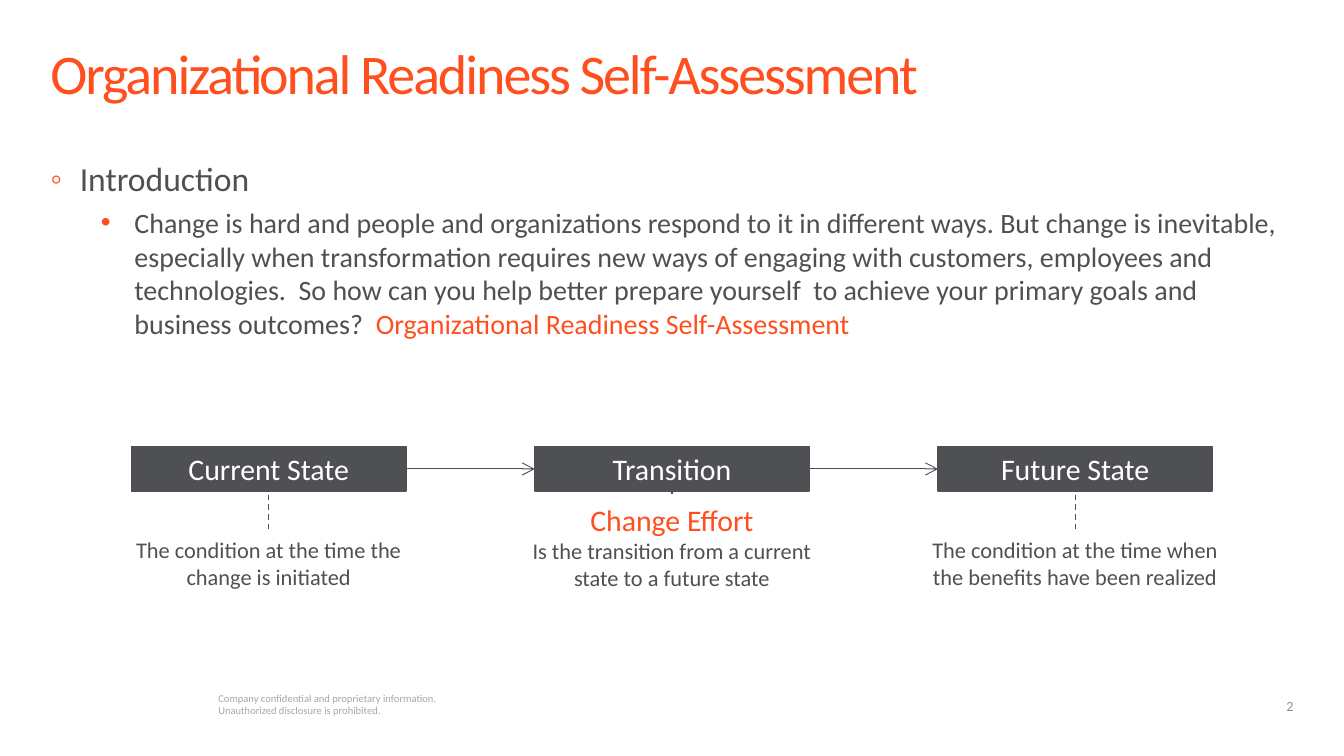
import pptx
import pptx.util
import pptx.dml.color
import pptx.enum.dml
import pptx.enum.shapes
import pptx.enum.text
import pptx.oxml.ns
from lxml import etree

PX = 9525
FONT = "Calibri"
COLORS = {
    "accent": "FF4F1F",
    "dark": "4E5054",
    "white": "FFFFFF",
    "footer": "A6A6A6",
    "number": "8C8C8C",
}
ALIGN = pptx.enum.text.PP_ALIGN
ANCHOR = pptx.enum.text.MSO_ANCHOR
DASH = pptx.enum.dml.MSO_LINE.DASH
QN = pptx.oxml.ns.qn

BOX_W, BOX_H, BOX_Y = 196, 32, 319
CAPTION_W = 226
FIRST_X, STEP = 192, 288
INTRO = (
    "Change is hard and people and organizations respond to it in different ways. "
    "But change is inevitable, especially when transformation requires new ways of "
    "engaging with customers, employees and technologies.  So how can you help better "
    "prepare yourself  to achieve your primary goals and business outcomes?  "
)
STATES = [
    ("Current State", 378, [("The condition at the time the change is initiated", 12, "dark")]),
    ("Transition", 353, [
        ("Change Effort", 16, "accent"),
        ("Is the transition from a current state to a future state", 12, "dark"),
    ]),
    ("Future State", 378, [
        ("The condition at the time when the benefits have been realized", 12, "dark"),
    ]),
]


def px(n):
    """Turn whole px into EMU."""
    return pptx.util.Emu(n * PX)


def rgb(name):
    """Look up a named colour."""
    return pptx.dml.color.RGBColor.from_string(COLORS[name])


def apply(obj, values):
    """Set each attribute of obj from a dict."""
    for name, value in values.items():
        setattr(obj, name, value)


def place(sp, x, y, w, h):
    """Move and size a shape."""
    apply(sp, {"left": px(x), "top": px(y), "width": px(w), "height": px(h)})


def frame(sp, insets=(0, 0, 0, 0), anchor=ANCHOR.TOP):
    """Format a text frame with px insets and return it."""
    tf = sp.text_frame
    apply(tf, {"word_wrap": True, "auto_size": pptx.enum.text.MSO_AUTO_SIZE.NONE,
               "vertical_anchor": anchor})
    sides = ("margin_left", "margin_top", "margin_right", "margin_bottom")
    apply(tf, {side: px(n) for side, n in zip(sides, insets)})
    return tf


def add_run(p, text, size, color):
    """Add a formatted run to a paragraph."""
    r = p.add_run()
    r.text = text
    apply(r.font, {"name": FONT, "size": pptx.util.Pt(size)})
    r.font.color.rgb = rgb(color)
    return r


def fill_text(tf, lines, align):
    """Write one paragraph for each (text, size, colour) line."""
    for i, line in enumerate(lines):
        p = tf.add_paragraph() if i else tf.paragraphs[0]
        p.alignment = align
        add_run(p, *line)


def add_text(s, box, lines, align=ALIGN.LEFT, insets=(0, 0, 0, 0), anchor=ANCHOR.TOP):
    """Add a wrapped text box."""
    sp = s.shapes.add_textbox(*map(px, box))
    fill_text(frame(sp, insets, anchor), lines, align)


def add_bullet(p, char, left, hang):
    """Give a paragraph an accent bullet and a hanging indent."""
    pPr = p._p.get_or_add_pPr()
    pPr.set("marL", str(px(left)))
    pPr.set("indent", str(px(-hang)))
    clr = etree.SubElement(pPr, QN("a:buClr"))
    etree.SubElement(clr, QN("a:srgbClr")).set("val", COLORS["accent"])
    etree.SubElement(pPr, QN("a:buChar")).set("char", char)


def add_title(s):
    """Fill the title placeholder."""
    sp = s.shapes.title
    place(sp, 36, 33, 888, 61)
    p = frame(sp).paragraphs[0]
    apply(p, {"alignment": ALIGN.LEFT, "line_spacing": 0.9})
    r = add_run(p, "Organizational Readiness Self-Assessment", 30, "accent")
    r._r.get_or_add_rPr().set("spc", "-110")


def add_body(s):
    """Fill the body placeholder with the introduction."""
    sp = s.placeholders[1]
    place(sp, 36, 94, 888, 374)
    tf = frame(sp, (0, 19, 0, 0))
    p = tf.paragraphs[0]
    add_bullet(p, "◦", 21, 21)
    p.space_before = pptx.util.Pt(0)
    add_run(p, "Introduction", 18, "dark")
    p = tf.add_paragraph()
    p.level = 1
    add_bullet(p, "•", 60, 24)
    p.space_before = pptx.util.Pt(3.8)
    add_run(p, INTRO, 15, "dark")
    add_run(p, "Organizational Readiness Self-Assessment", 15, "accent")


def add_line(s, start, end, width, dash=None, arrow=False):
    """Add a straight connector, dashed or with an arrowhead."""
    c = s.shapes.add_connector(pptx.enum.shapes.MSO_CONNECTOR.STRAIGHT,
                               *map(px, start + end))
    apply(c.line, {"width": pptx.util.Pt(width), "dash_style": dash})
    c.line.color.rgb = rgb("dark")
    if arrow:
        etree.SubElement(c.line._get_or_add_ln(), QN("a:tailEnd")).set("type", "arrow")
    etree.SubElement(c._element.spPr, QN("a:effectLst"))


def add_state(s, x, label):
    """Add a state box centred on x."""
    sp = s.shapes.add_shape(pptx.enum.shapes.MSO_SHAPE.RECTANGLE,
                            *map(px, (x - BOX_W // 2, BOX_Y, BOX_W, BOX_H)))
    sp.shadow.inherit = False
    sp.fill.solid()
    sp.fill.fore_color.rgb = rgb("dark")
    sp.line.color.rgb = rgb("dark")
    sp.line.width = pptx.util.Pt(1)
    tf = frame(sp, (10, 5, 10, 5), ANCHOR.MIDDLE)
    fill_text(tf, [(label, 16, "white")], ALIGN.CENTER)


def add_flow(s):
    """Add the three states with arrows, dashed stems and captions."""
    for i, (label, y, lines) in enumerate(STATES):
        x = FIRST_X + i * STEP
        add_state(s, x, label)
        if i:
            mid = BOX_Y + BOX_H // 2
            add_line(s, (x - STEP + BOX_W // 2, mid), (x - BOX_W // 2, mid), 0.5, arrow=True)
        add_line(s, (x, y), (x, BOX_Y + BOX_H), 0.75, dash=DASH)
        add_text(s, (x - CAPTION_W // 2, y, CAPTION_W, 426 - y), lines,
                 ALIGN.CENTER, (10, 5, 10, 5))


def main():
    """Build and save the slide."""
    prs = pptx.Presentation()
    apply(prs, {"slide_width": px(960), "slide_height": px(540)})
    s = prs.slides.add_slide(prs.slide_layouts[1])
    add_title(s)
    add_body(s)
    notice = ("Company confidential and proprietary information. "
              "Unauthorized disclosure is prohibited.")
    add_text(s, (156, 494, 171, 24), [(notice, 5.6, "footer")])
    add_text(s, (724, 490, 200, 29), [("2", 7.5, "number")],
             ALIGN.RIGHT, (10, 5, 0, 5), ANCHOR.MIDDLE)
    add_flow(s)
    prs.save("out.pptx")


if __name__ == "__main__":
    main()
